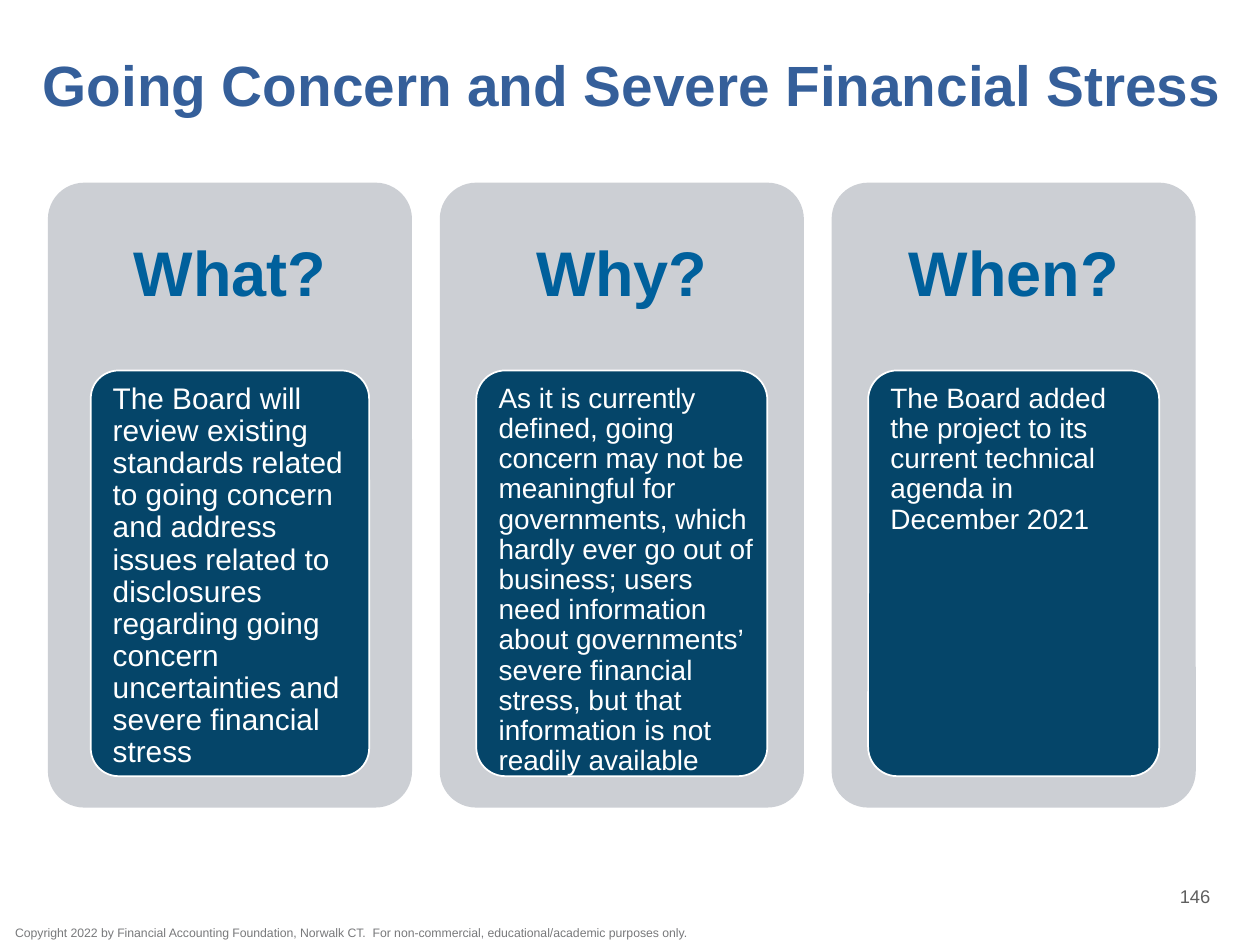
import pptx
import pptx.dml.color
import pptx.enum.shapes
import pptx.enum.text
import pptx.util

Inches = pptx.util.Inches
Pt = pptx.util.Pt
RGBColor = pptx.dml.color.RGBColor
ALIGN = pptx.enum.text.PP_ALIGN
ANCHOR = pptx.enum.text.MSO_ANCHOR

WHITE = RGBColor(0xFF, 0xFF, 0xFF)
PANEL = RGBColor(0xCC, 0xCF, 0xD4)
NAVY = RGBColor(0x05, 0x45, 0x69)
BLUE = RGBColor(0x00, 0x60, 0x9C)
TITLE = RGBColor(0x35, 0x5F, 0x9A)
GRAY = RGBColor(0x5F, 0x5F, 0x5F)
NOTE = RGBColor(0x78, 0x79, 0x7B)

# Heading, text, text size, card width
TOPICS = [
    ("What?", "The Board will review existing standards related to going "
     "concern and address issues related to disclosures regarding going "
     "concern uncertainties and severe financial stress", 17, 2.21),
    ("Why?", "As it is currently defined, going concern may not be "
     "meaningful for governments, which hardly ever go out of business; "
     "users need information about governments’ severe financial stress, "
     "but that information is not readily available", 16, 2.31),
    ("When?", "The Board added the project to its current technical agenda "
     "in December 2021", 16, 2.31),
]
LEFT, TOP, WIDE, HIGH = 0.38, 1.45, 2.89, 4.96
STEP = 3.11
HEAD = 1.49


class Deck:
    def __init__(self):
        self.prs = pptx.Presentation()
        self.prs.slide_width = Inches(10)
        self.prs.slide_height = Inches(7.5)
        self.slide = self.prs.slides.add_slide(self.prs.slide_layouts[6])
        self.font = "Arial"

    def label(self, shape, text, size, color, pad=(0, 0, 0, 0), bold=False,
              align=ALIGN.LEFT, anchor=ANCHOR.TOP, space=None, wrap=True):
        """Fill a shape with one run; pad is left, top, right, bottom."""
        frame = shape.text_frame
        frame.word_wrap = wrap
        frame.vertical_anchor = anchor
        (frame.margin_left, frame.margin_top,
         frame.margin_right, frame.margin_bottom) = map(Inches, pad)
        para = frame.paragraphs[0]
        para.alignment = align
        para.line_spacing = space
        run = para.add_run()
        run.text = text
        run.font.name = self.font
        run.font.size = Pt(size)
        run.font.bold = bold
        run.font.color.rgb = color

    def text(self, box, *args, **style):
        shape = self.slide.shapes.add_textbox(*map(Inches, box))
        self.label(shape, *args, **style)

    def card(self, box, fill, line=None):
        shape = self.slide.shapes.add_shape(
            pptx.enum.shapes.MSO_SHAPE.ROUNDED_RECTANGLE, *map(Inches, box))
        shape.adjustments[0] = 0.1
        shape.shadow.inherit = False
        shape.fill.solid()
        shape.fill.fore_color.rgb = fill
        if line is None:
            shape.line.fill.background()
        else:
            shape.line.color.rgb = line
            shape.line.width = Pt(1)
        return shape


def main():
    deck = Deck()
    deck.text((0.24, 0.31, 9.62, 0.74),
              "Going Concern and Severe Financial Stress", 32.4, TITLE,
              pad=(0.1, 0, 0, 0), bold=True, anchor=ANCHOR.MIDDLE,
              space=Pt(37))

    for col, (head, body, size, width) in enumerate(TOPICS):
        left = LEFT + col * STEP
        deck.card((left, TOP, WIDE, HIGH), PANEL)
        deck.text((left, TOP, WIDE, HEAD), head, 36, BLUE, pad=(0.15,) * 4,
                  bold=True, align=ALIGN.CENTER, anchor=ANCHOR.MIDDLE,
                  space=0.9)
        inner = left + (WIDE - width) / 2
        card = deck.card((inner, TOP + HEAD, width, 3.22), NAVY, WHITE)
        deck.label(card, body, size, WHITE, pad=(0.11, 0.04, 0.04, 0.04),
                   space=0.9)

    deck.text((8.97, 6.95, 1.03, 0.33), "146", 10.5, GRAY,
              pad=(0.1, 0.05, 0.1, 0.05), align=ALIGN.CENTER,
              anchor=ANCHOR.MIDDLE)
    deck.text((0.12, 7.34, 5.43, 0.14),
              "Copyright 2022 by Financial Accounting Foundation, Norwalk CT.  "
              "For non-commercial, educational/academic purposes only.",
              7, NOTE, wrap=False)
    deck.prs.save("out.pptx")


if __name__ == "__main__":
    main()
